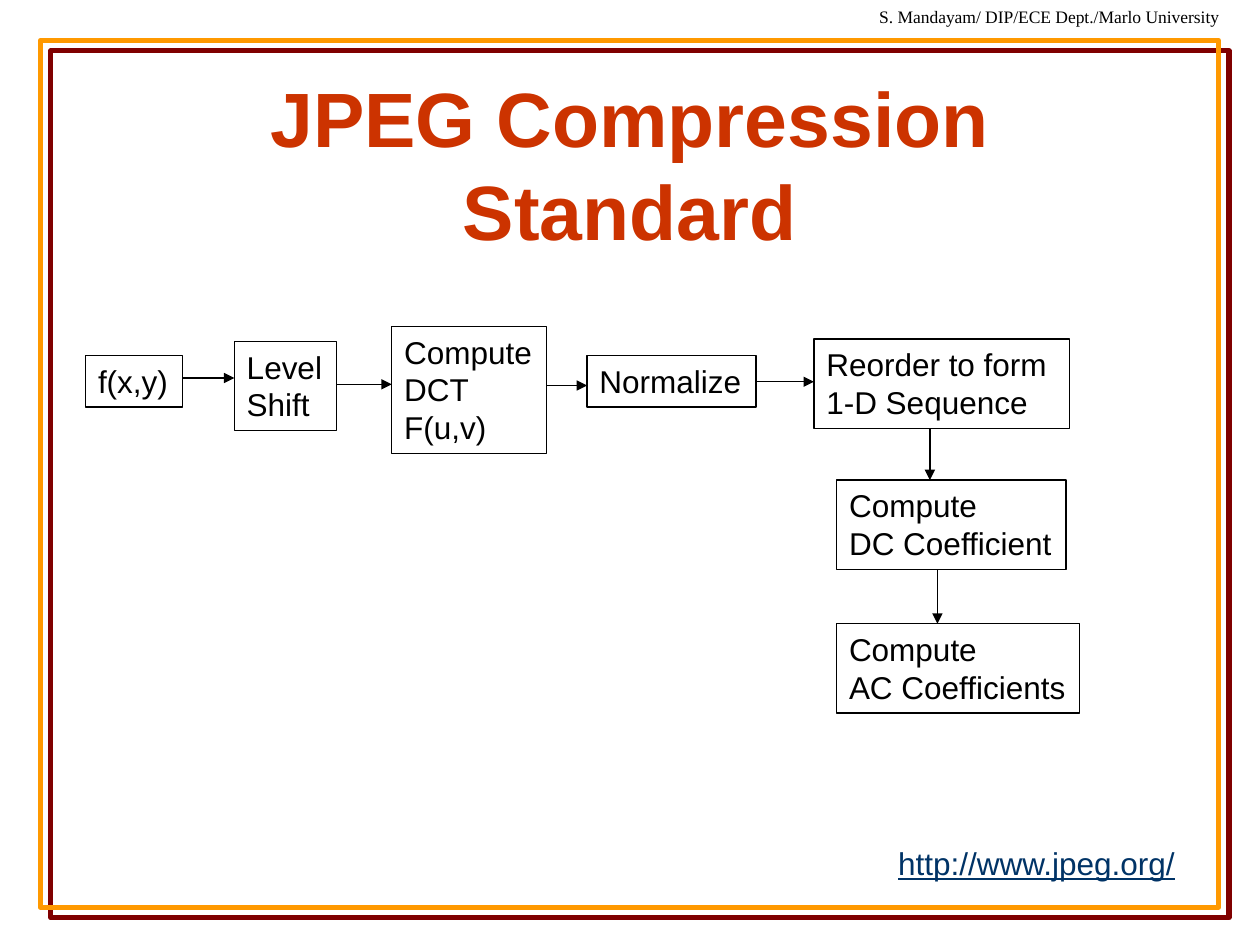
from lxml import etree
from pptx import Presentation
from pptx.dml.color import RGBColor
from pptx.enum.shapes import MSO_CONNECTOR, MSO_SHAPE
from pptx.enum.text import MSO_ANCHOR, MSO_AUTO_SIZE, PP_ALIGN
from pptx.oxml import parse_xml
from pptx.oxml.ns import qn
from pptx.util import Inches, Pt

RECTANGLE = MSO_SHAPE.RECTANGLE
STRAIGHT = MSO_CONNECTOR.STRAIGHT
LEFT, CENTER = PP_ALIGN.LEFT, PP_ALIGN.CENTER
TOP, MIDDLE = MSO_ANCHOR.TOP, MSO_ANCHOR.MIDDLE
FIT_SHAPE, NO_FIT = MSO_AUTO_SIZE.SHAPE_TO_FIT_TEXT, MSO_AUTO_SIZE.NONE

BLACK = RGBColor(0x00, 0x00, 0x00)
ORANGE = RGBColor(0xFF, 0x99, 0x00)
RED = RGBColor(0xCC, 0x33, 0x00)
NAVY = RGBColor(0x00, 0x33, 0x66)

TITLE = "JPEG Compression Standard"
CREDIT = "S. Mandayam/ DIP/ECE Dept./Marlo University"
ADDRESS = "http://www.jpeg.org/"

STEPS = {
    "input": (["f(x,y)"], 0.68, 2.82, 0.77),
    "shift": (["Level", "Shift"], 1.86, 2.71, 0.81),
    "transform": (["Compute", "DCT", "F(u,v)"], 3.11, 2.59, 1.23),
    "normalize": (["Normalize"], 4.66, 2.82, 1.34),
    "reorder": (["Reorder to form", "1-D Sequence"], 6.46, 2.69, 2.03),
    "dc": (["Compute", "DC Coefficient"], 6.64, 3.81, 1.82),
    "ac": (["Compute", "AC Coefficients"], 6.64, 4.95, 1.93),
}
ACROSS = [
    ("input", "shift", 3.0),
    ("shift", "transform", 3.05),
    ("transform", "normalize", 3.06),
    ("normalize", "reorder", 3.03),
]
DOWN = [("reorder", "dc", 7.38), ("dc", "ac", 7.44)]
LINE_HEIGHT, PADDING = 0.3, 0.11

FRAME_SHADOW = (
    '<a:effectLst xmlns:a="http://schemas.openxmlformats.org/drawingml/2006/main">'
    '<a:outerShdw dist="107950" dir="2700000" algn="ctr" rotWithShape="0">'
    '<a:srgbClr val="800000"/></a:outerShdw></a:effectLst>'
)


def write(shape, lines, size=18, font="Arial", color=BLACK, bold=False,
          underline=False, align=LEFT, anchor=TOP, wrap=False, fit=FIT_SHAPE):
    frame = shape.text_frame
    frame.word_wrap = wrap
    frame.auto_size = fit
    frame.vertical_anchor = anchor
    for index, line in enumerate(lines):
        para = frame.add_paragraph() if index else frame.paragraphs[0]
        para.alignment = align
        span = para.add_run()
        span.text = line
        span.font.size = Pt(size)
        span.font.name = font
        span.font.color.rgb = color
        span.font.bold = bold
        span.font.underline = underline


def add_outline(page, left, top, width, height, color, weight):
    box = page.shapes.add_shape(
        RECTANGLE, Inches(left), Inches(top), Inches(width), Inches(height))
    box.fill.background()
    box.line.color.rgb = color
    box.line.width = Pt(weight)
    box.shadow.inherit = False
    return box


def add_label(page, text, left, top, width, height, **style):
    box = page.shapes.add_textbox(
        Inches(left), Inches(top), Inches(width), Inches(height))
    write(box, [text], **style)


def add_arrow(page, start, end):
    arrow = page.shapes.add_connector(
        STRAIGHT, *(Inches(value) for value in (*start, *end)))
    arrow.line.color.rgb = BLACK
    arrow.line.width = Pt(0.75)
    etree.SubElement(arrow.line._get_or_add_ln(), qn("a:tailEnd"), type="triangle")
    etree.SubElement(arrow._element.spPr, qn("a:effectLst"))


def step_height(lines):
    return LINE_HEIGHT * len(lines) + PADDING


def main():
    deck = Presentation()
    deck.slide_width, deck.slide_height = Inches(10), Inches(7.5)
    page = deck.slides.add_slide(deck.slide_layouts[5])

    border = add_outline(page, 0.32, 0.32, 9.35, 6.88, ORANGE, 3)
    properties = border._element.spPr
    properties.replace(properties.find(qn("a:effectLst")), parse_xml(FRAME_SHADOW))
    add_label(page, CREDIT, 6.88, 0, 2.97, 0.27, size=10, font="Times New Roman")

    title = page.shapes.title
    title.left, title.top = Inches(0.75), Inches(0.67)
    title.width, title.height = Inches(8.5), Inches(1.25)
    write(title, [TITLE], size=44, color=RED, bold=True, align=CENTER,
          anchor=MIDDLE, wrap=True, fit=NO_FIT)

    for lines, left, top, width in STEPS.values():
        box = add_outline(page, left, top, width, step_height(lines), BLACK, 0.75)
        write(box, lines)

    for source, target, y in ACROSS:
        _, left, _, width = STEPS[source]
        add_arrow(page, (left + width, y), (STEPS[target][1], y))
    for source, target, x in DOWN:
        lines, _, top, _ = STEPS[source]
        add_arrow(page, (x, top + step_height(lines)), (x, STEPS[target][2]))

    add_label(page, ADDRESS, 7.03, 6.65, 2.4, 0.4, color=NAVY, underline=True)
    deck.save("out.pptx")


if __name__ == "__main__":
    main()
